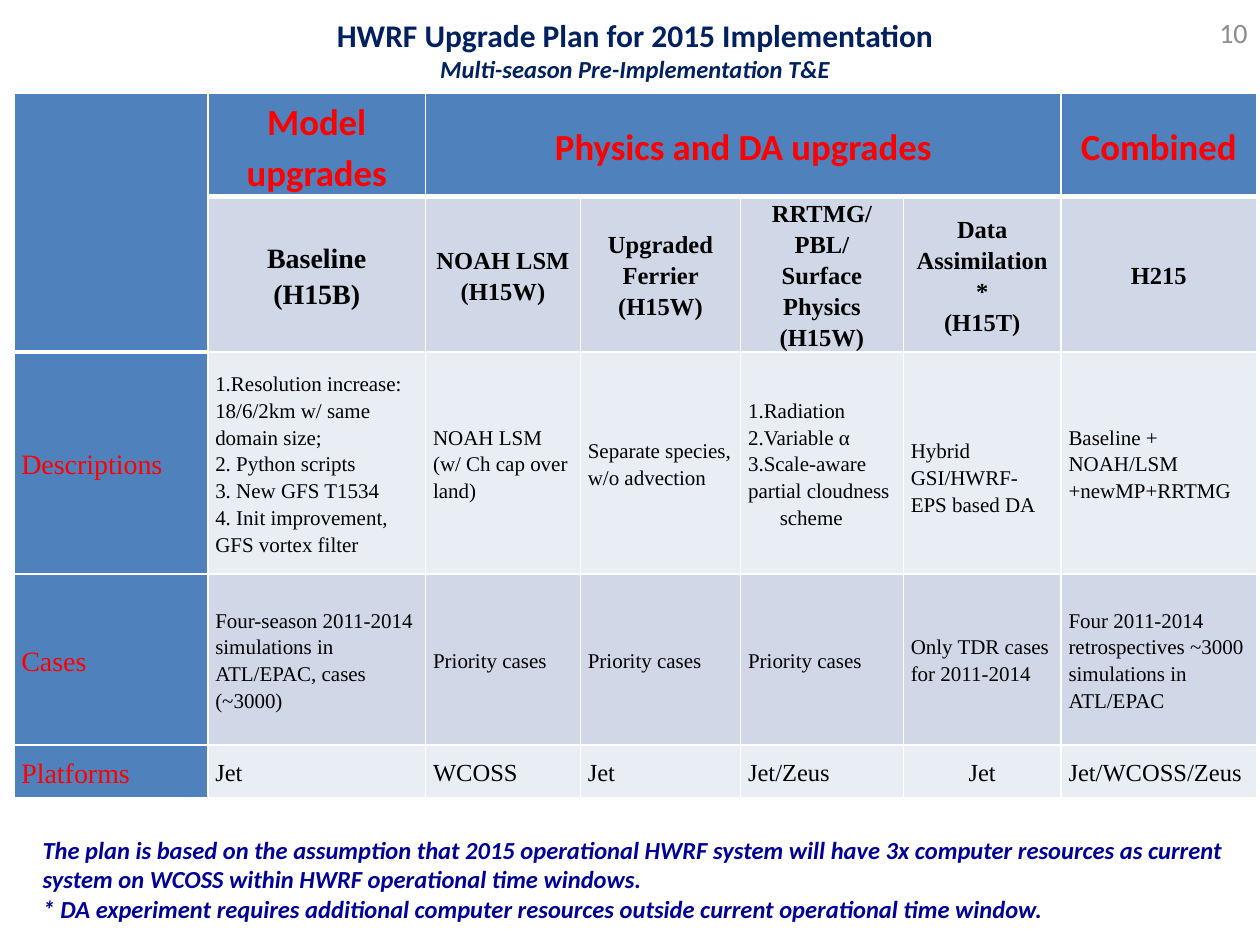
"""Build the HWRF 2015 upgrade plan slide with its test matrix."""
from dataclasses import dataclass

from lxml.etree import SubElement
from pptx import Presentation
from pptx.dml.color import RGBColor
from pptx.enum.text import MSO_ANCHOR as Anchor, MSO_AUTO_SIZE as AutoSize, PP_ALIGN as Align
from pptx.oxml.ns import qn
from pptx.util import Cm, Pt


@dataclass(frozen=True)
class Theme:
    sans: str = "Calibri"
    serif: str = "Times New Roman"
    navy: str = "002060"
    blue: str = "000099"
    grey: str = "8C8C8C"
    red: str = "FF0000"
    black: str = "000000"
    white: str = "FFFFFF"
    header: str = "4F81BD"
    dark_band: str = "D0D8E8"
    light_band: str = "E9EDF4"
    heading: int = 21
    title: int = 18
    label: int = 16
    medium: int = 14
    small: int = 12


theme = Theme()


def write(frame, text, *, sizes, color, font=theme.sans, bold=False, italics=(False,),
          align=Align.LEFT, spacing=1.0, hanging=0):
    frame.word_wrap = True
    for index, line in enumerate(text.split("\n")):
        para = frame.paragraphs[0] if index == 0 else frame.add_paragraph()
        para.alignment = align
        para.line_spacing = spacing
        if hanging:
            properties = para._p.get_or_add_pPr()
            properties.set("marL", str(hanging))
            properties.set("indent", str(-hanging))
        span = para.add_run()
        span.text = line
        span.font.name = font
        span.font.size = Pt(sizes[min(index, len(sizes) - 1)])
        span.font.bold = bold
        span.font.italic = italics[min(index, len(italics) - 1)]
        span.font.color.rgb = RGBColor.from_string(color)


def paint(cell, fill, bottom):
    properties = cell._tc.get_or_add_tcPr()
    for side, width in (("L", 1), ("R", 1), ("T", 1), ("B", bottom)):
        line = SubElement(properties, qn(f"a:ln{side}"), w=str(Pt(width)))
        solid = SubElement(line, qn("a:solidFill"))
        SubElement(solid, qn("a:srgbClr"), val=theme.white)
    cell.fill.solid()
    cell.fill.fore_color.rgb = RGBColor.from_string(fill)
    cell.vertical_anchor = Anchor.MIDDLE
    cell.margin_left = cell.margin_right = Cm(0.15)
    cell.margin_top = cell.margin_bottom = 0


deck = Presentation()
deck.slide_width, deck.slide_height = Cm(25.4), Cm(19.05)
page = deck.slides.add_slide(deck.slide_layouts[5])

columns = [3.91, 4.39, 3.12, 3.23, 3.28, 3.18, 3.94]
heights = [2.08, 2.69, 4.47, 3.45, 1.07]
bands = [theme.header, theme.dark_band, theme.light_band, theme.dark_band, theme.light_band]
body_sizes = [theme.heading, theme.medium, theme.small, theme.small, theme.medium]
matrix = [
    ["", "Model upgrades", "Physics and DA upgrades", "", "", "", "Combined"],
    ["", "Baseline\n(H15B)", "NOAH LSM (H15W)", "Upgraded Ferrier (H15W)",
     "RRTMG/ PBL/\nSurface Physics (H15W)", "Data Assimilation*\n(H15T)", "H215"],
    ["Descriptions",
     "1.Resolution increase: 18/6/2km w/ same domain size;\n2. Python scripts\n"
     "3. New GFS T1534\n4. Init improvement, GFS vortex filter",
     "NOAH LSM\n(w/ Ch cap over land)", "Separate species, w/o advection",
     "1.Radiation\n2.Variable α\n3.Scale-aware\npartial cloudness scheme",
     "Hybrid GSI/HWRF-EPS based DA", "Baseline + NOAH/LSM +newMP+RRTMG"],
    ["Cases", "Four-season 2011-2014 simulations in ATL/EPAC, cases (~3000)",
     "Priority cases", "Priority cases", "Priority cases", "Only TDR cases for 2011-2014",
     "Four 2011-2014 retrospectives ~3000 simulations in ATL/EPAC"],
    ["Platforms", "Jet", "WCOSS", "Jet", "Jet/Zeus", "Jet", "Jet/WCOSS/Zeus"],
]

table = page.shapes.add_table(len(heights), len(columns), Cm(0.28), Cm(1.88),
                              Cm(sum(columns)), Cm(sum(heights))).table
table.first_row = table.horz_banding = False
for column, width in zip(table.columns, columns):
    column.width = Cm(width)
for row, height in zip(table.rows, heights):
    row.height = Cm(height)
table.cell(0, 0).merge(table.cell(1, 0))
table.cell(0, 2).merge(table.cell(0, 5))

for row, texts in enumerate(matrix):
    for column, text in enumerate(texts):
        cell = table.cell(row, column)
        paint(cell, theme.header if column == 0 else bands[row], 3 if row == 0 else 1)
        if not text:
            continue
        is_label = column == 0
        is_large = is_label or (row, column) == (1, 1)
        is_centered = row < 2 or (row, column) == (4, 5)
        write(cell.text_frame, text,
              sizes=[theme.label if is_large else body_sizes[row]],
              color=theme.red if is_label or row == 0 else theme.black,
              font=theme.sans if row == 0 else theme.serif,
              bold=row < 2,
              align=Align.CENTER if is_centered else Align.LEFT,
              spacing=1.15,
              hanging=Cm(0.64) if (row, column) == (2, 4) else 0)
table.cell(2, 5).margin_top = Cm(0.56)

title = page.shapes.title
title.left, title.top, title.width, title.height = Cm(3.33), Cm(0.2), Cm(18.95), Cm(1.68)
title.text_frame.auto_size = AutoSize.NONE
title.text_frame.vertical_anchor = Anchor.TOP
write(title.text_frame, "HWRF Upgrade Plan for 2015 Implementation\nMulti-season Pre-Implementation T&E",
      sizes=[theme.title, theme.medium], color=theme.navy, bold=True,
      italics=(False, True), align=Align.CENTER)

note = page.shapes.add_textbox(Cm(0.61), Cm(16.71), Cm(24.36), Cm(2.06))
write(note.text_frame,
      "The plan is based on the assumption that 2015 operational HWRF system will have 3x computer "
      "resources as current system on WCOSS within HWRF operational time windows.\n"
      "* DA experiment requires additional computer resources outside current operational time window.",
      sizes=[theme.medium], color=theme.blue, bold=True, italics=(True,))

number = page.shapes.add_textbox(Cm(23.95), Cm(0), Cm(1.45), Cm(1.32))
number.text_frame.vertical_anchor = Anchor.MIDDLE
write(number.text_frame, "10", sizes=[theme.label], color=theme.grey, align=Align.RIGHT)

deck.save("out.pptx")
